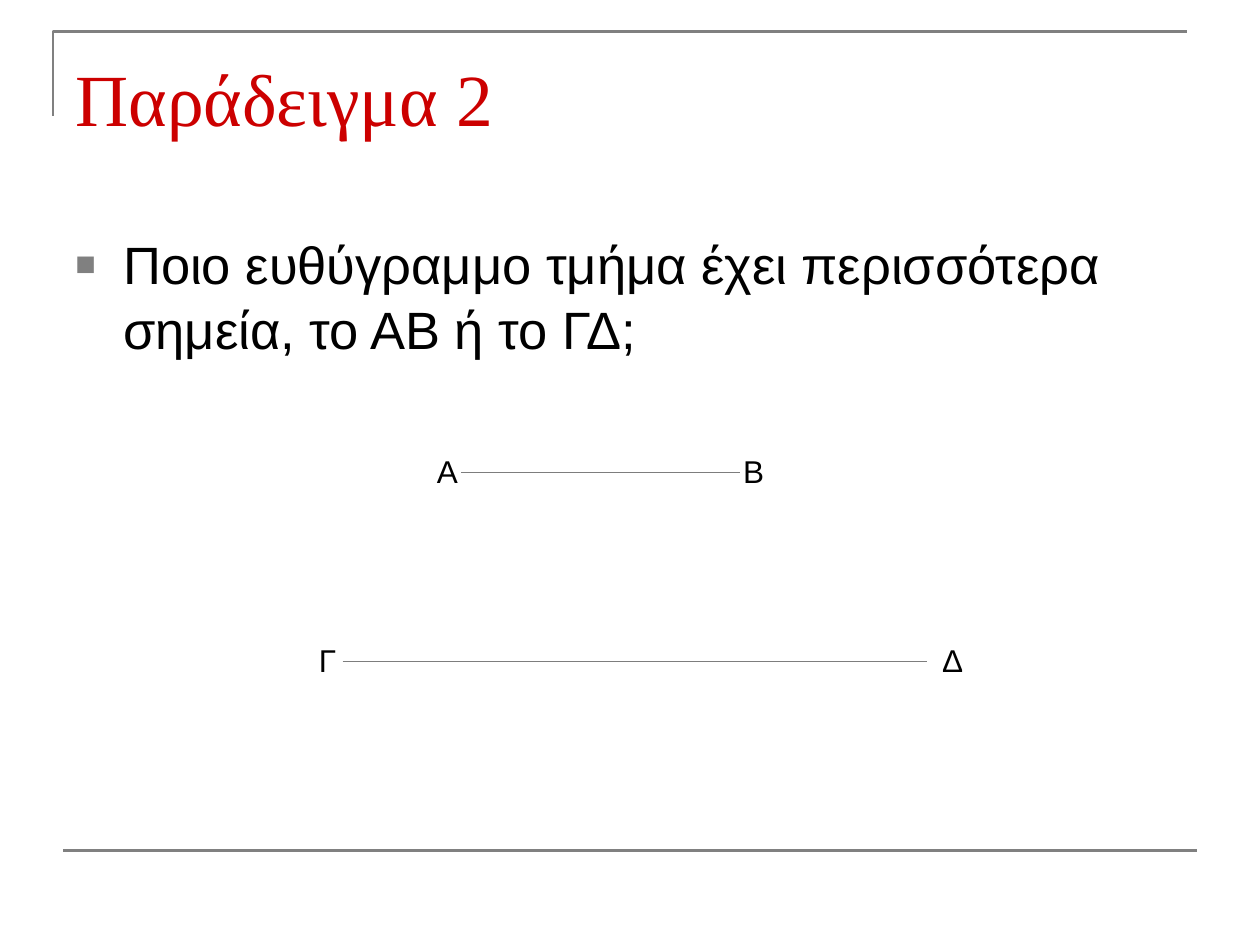
from lxml.etree import SubElement
from pptx import Presentation
from pptx.dml.color import RGBColor
from pptx.enum.shapes import MSO_CONNECTOR
from pptx.enum.text import MSO_ANCHOR, MSO_AUTO_SIZE, PP_ALIGN
from pptx.oxml.ns import qn
from pptx.util import Inches, Pt

WIDTH, HEIGHT = 10, 7.5
MARGIN = WIDTH / 20
CONTENT_WIDTH = WIDTH - 2 * MARGIN
GRAY, SEGMENT_GRAY, RED, BLACK = "808080", "7D7D7D", "CC0000", "000000"

TITLE = "Παράδειγμα 2"
QUESTION = "Ποιο ευθύγραμμο τμήμα έχει περισσότερα σημεία, το ΑΒ ή το ΓΔ;"
SEGMENTS = [
    {"y": HEIGHT * 0.5, "ends": (3.66, 5.87), "labels": (("Α", 3.55), ("Β", 5.98))},
    {"y": HEIGHT * 0.7, "ends": (2.72, 7.36), "labels": (("Γ", 2.6), ("Δ", 7.56))},
]
LABEL_WIDTH, LABEL_HEIGHT, LABEL_RISE = 0.55, 0.4, 0.24


def color(value):
    return RGBColor.from_string(value)


def write(holder, text, size, font="Arial", fill=BLACK, align=PP_ALIGN.LEFT,
          top_inset=0.05, spacing=1.0, bullet=None):
    frame = holder.text_frame
    frame.word_wrap = True
    frame.auto_size = MSO_AUTO_SIZE.NONE
    frame.vertical_anchor = MSO_ANCHOR.TOP
    frame.margin_top = Inches(top_inset)
    paragraph = frame.paragraphs[0]
    paragraph.alignment = align
    paragraph.line_spacing = spacing
    if bullet:
        add_bullet(paragraph, **bullet)
    run = paragraph.add_run()
    run.text = text
    run.font.size = Pt(size)
    run.font.name = font
    run.font.color.rgb = color(fill)


def add_bullet(paragraph, char, fill, percent, indent):
    properties = paragraph._p.get_or_add_pPr()
    properties.set("marL", str(Inches(indent)))
    properties.set("indent", str(-Inches(indent)))
    bullet_color = SubElement(properties, qn("a:buClr"))
    SubElement(bullet_color, qn("a:srgbClr"), val=fill)
    SubElement(properties, qn("a:buSzPct"), val=str(percent * 1000))
    SubElement(properties, qn("a:buFont"), typeface="Arial")
    SubElement(properties, qn("a:buChar"), char=char)


def add_text(slide, left, top, width, height, text, **style):
    box = slide.shapes.add_textbox(*map(Inches, (left, top, width, height)))
    write(box, text, **style)


def add_rule(slide, start, end, y, fill, weight):
    rule = slide.shapes.add_connector(
        MSO_CONNECTOR.STRAIGHT, *map(Inches, (start, y, end, y)))
    rule.line.color.rgb = color(fill)
    rule.line.width = Pt(weight)
    SubElement(rule._element.spPr, qn("a:effectLst"))


def add_corner(slide, left, top, width, height):
    builder = slide.shapes.build_freeform(
        Inches(left), Inches(top + height), scale=1.0)
    builder.add_line_segments(
        [(Inches(left), Inches(top)), (Inches(left + width), Inches(top))],
        close=False)
    corner = builder.convert_to_shape()
    corner.shadow.inherit = False
    corner.fill.background()
    corner.line.color.rgb = color(GRAY)
    corner.line.width = Pt(1.5)


def main():
    deck = Presentation()
    deck.slide_width, deck.slide_height = Inches(WIDTH), Inches(HEIGHT)
    slide = deck.slides.add_slide(deck.slide_layouts[5])

    add_corner(slide, 0.42, HEIGHT / 30, CONTENT_WIDTH, 0.67)
    add_rule(slide, MARGIN, WIDTH - MARGIN, HEIGHT * 0.9, GRAY, 1.5)

    title = slide.shapes.title
    title.left, title.top, title.width, title.height = map(
        Inches, (MARGIN, HEIGHT * 0.04, CONTENT_WIDTH, HEIGHT / 6))
    write(title, TITLE, size=42, font="Times New Roman", fill=RED, top_inset=0.12)

    add_text(slide, MARGIN, 1.75, CONTENT_WIDTH, HEIGHT * 0.66, QUESTION,
             size=30, spacing=1.04, top_inset=0.07,
             bullet={"char": "■", "fill": GRAY, "percent": 65, "indent": 0.38})

    for segment in SEGMENTS:
        add_rule(slide, *segment["ends"], segment["y"], SEGMENT_GRAY, 0.75)
        for letter, center in segment["labels"]:
            add_text(slide, center - LABEL_WIDTH / 2, segment["y"] - LABEL_RISE,
                     LABEL_WIDTH, LABEL_HEIGHT, letter, size=18,
                     align=PP_ALIGN.CENTER, top_inset=0.08)

    deck.save("out.pptx")


if __name__ == "__main__":
    main()
